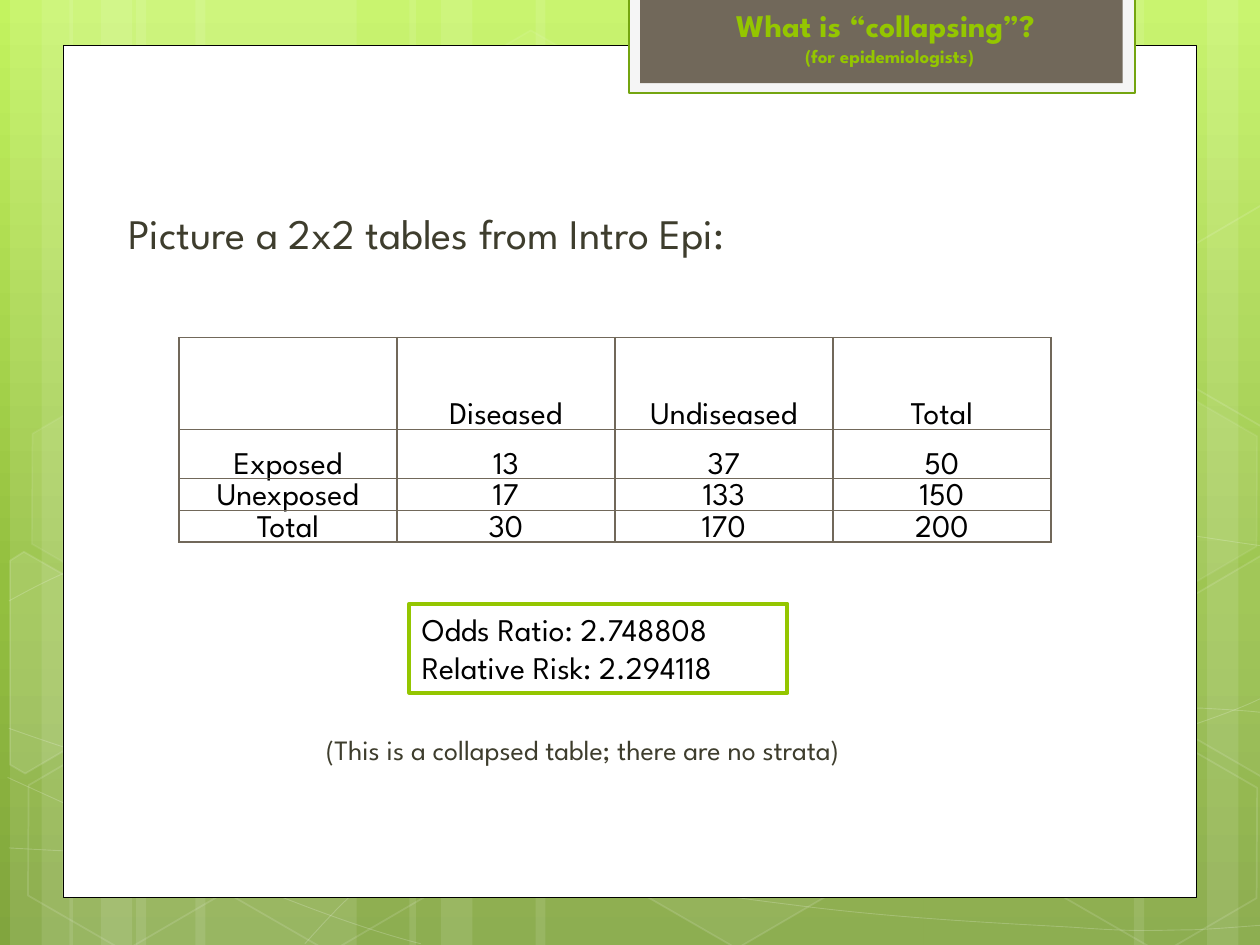
"""Build the slide that explains collapsing with a 2x2 table."""
import copy
import pptx
import pptx.dml.color
import pptx.enum.shapes
import pptx.enum.text
import pptx.oxml
import pptx.oxml.ns
import pptx.util

PX = 9144
THEME = {
    "font": "League Spartan", "white": "FFFFFF", "black": "000000",
    "lime": "94C600", "edge": "74A510", "pale": "F5F5F5", "brown": "71685A",
    "ink": "3E3D2D", "head": 24, "base": 18, "note": 16, "sub": 10.8,
    "sky": [(0, "C3F35F"), (0.62, "93BF3F"), (1, "81A53E")],
}
TITLE = ["What is “collapsing”? ", "(for epidemiologists)"]
LEAD = "Picture a 2x2 tables from Intro Epi:"
NOTE = "(This is a collapsed table; there are no strata)"
STATS = ["Odds Ratio: 2.748808", "Relative Risk: 2.294118"]
GRID = [
    ["", "Diseased", "Undiseased", "Total"],
    ["Exposed", "13", "37", "50"],
    ["Unexposed", "17", "133", "150"],
    ["Total", "30", "170", "200"],
]
ROWS = [73, 39, 24, 24]
COL = 173

BANDS = [(108, 175), (8, 50), (33, 83), (155, 175), (55, 50), (80, 83),
         (733, 175), (958, 50), (900, 83), (425, 308), (325, 50), (350, 83)]
WAVES = [
    [(7, 673), (61, 676), (115, 679), (190, 678), (265, 677), (358, 675),
     (458, 665), (558, 655), (700, 636), (792, 617), (883, 598), (977, 568),
     (1007, 551)],
    [(7, 477), (36, 461), (65, 446), (121, 431), (178, 416), (259, 394),
     (347, 387), (436, 380), (544, 379), (654, 387), (764, 395), (947, 426),
     (1007, 434)],
    [(6, 617), (127, 672), (247, 727), (334, 749)],
    [(7, 578), (38, 589), (70, 600), (128, 616), (186, 631), (273, 656),
     (357, 673), (440, 690), (545, 708), (628, 718), (711, 729), (800, 733),
     (853, 736), (905, 740), (919, 738), (945, 738), (971, 737), (989, 735),
     (1007, 734)],
    [(242, 749), (260, 729), (278, 709), (302, 691), (326, 673), (360, 653),
     (388, 639), (416, 625), (433, 619), (470, 609), (506, 599), (573, 585),
     (608, 578), (644, 571), (649, 571), (680, 569), (711, 566), (760, 563),
     (794, 562), (829, 561), (886, 562), (886, 562), (908, 562), (931, 562),
     (953, 562), (971, 563), (988, 564), (997, 565), (1006, 566), (1003, 565),
     (1006, 566)],
]
HEXES = [(334, 36, 4, 8), (497, 589, 6, 12), (11, 591, 0, 12),
         (14, 312, 7, 8), (174, 592, 0, 12), (753, 453, 10, 12),
         (834, 593, 0, 12), (834, 314, 7, 8)]
SHARDS = [
    ([(8, 445), (19, 438), (96, 482), (95, 570), (20, 614), (8, 607)], 10),
    ([(926, 485), (1001, 441), (1009, 446), (1009, 613), (1002, 617),
      (926, 573)], 4),
    ([(926, 207), (1001, 163), (1010, 168), (1009, 335), (1002, 339),
      (926, 295)], 0),
]
PANELS = [((50, 36, 900, 676), "white", "black", 0.5),
          ((499, -2, 402, 76), "pale", "edge", 1.25),
          ((508, -2, 383, 68), "brown", None, 0)]

RGB = pptx.dml.color.RGBColor.from_string
PT = pptx.util.Pt
QN = pptx.oxml.ns.qn
NS = pptx.oxml.ns.nsdecls("a")
KIND = pptx.enum.shapes.MSO_SHAPE
ALIGN = pptx.enum.text.PP_ALIGN
ANCHOR = pptx.enum.text.MSO_ANCHOR


def haze(fill, name, alpha):
    if not alpha:
        fill.background()
        return
    fill.solid()
    fill.fore_color.rgb = RGB(THEME[name])
    if alpha < 100:
        tone = fill._xPr.find(QN("a:solidFill"))[0]
        tone.append(pptx.oxml.parse_xml(f'<a:alpha {NS} val="{alpha * 1000}"/>'))


def paint(item, fill, alpha, line=None, width=0, glow=100):
    item.shadow.inherit = False
    haze(item.fill, fill, alpha)
    haze(item.line.fill, line, glow if line else 0)
    if line:
        item.line.width = PT(width)
    return item


def place(shapes, kind, box):
    return shapes.add_shape(kind, *(n * PX for n in box))


def trace(shapes, dots, close):
    pen = shapes.build_freeform(*dots[0], scale=float(PX))
    pen.add_line_segments(dots[1:], close=close)
    return pen.convert_to_shape()


def curve(shapes, dots):
    wave = trace(shapes, dots, False)
    legs = list(wave.element.iter(QN("a:lnTo")))
    for i in range(0, len(legs), 3):
        bend = pptx.oxml.parse_xml(f"<a:cubicBezTo {NS}/>")
        legs[i].addprevious(bend)
        for leg in legs[i:i + 3]:
            bend.append(leg[0])
            leg.getparent().remove(leg)
    return wave


def write(frame, lines, size, name, align=ALIGN.LEFT, lead=1.0):
    frame.text = "\n".join(lines)
    for para in frame.paragraphs:
        para.alignment = align
        para.line_spacing = lead
        for font in [para.font] + [run.font for run in para.runs]:
            font.name, font.size = THEME["font"], PT(THEME[size])
            font.color.rgb = RGB(THEME[name])


def label(shapes, box, text, size, name, align, anchor):
    frame = shapes.add_textbox(*(n * PX for n in box)).text_frame
    frame.word_wrap = True
    frame.vertical_anchor = anchor
    write(frame, [text], size, name, align)
    return frame


def sky(slide):
    fill = slide.background.fill
    fill.gradient()
    fill.gradient_angle = 270
    stops = slide.element.find(".//" + QN("a:gsLst"))
    stops.append(copy.deepcopy(stops[0]))
    for stop, (spot, tone) in zip(fill.gradient_stops, THEME["sky"]):
        stop.position, stop.color.rgb = spot, RGB(tone)


def decor(shapes):
    for left, wide in BANDS:
        paint(place(shapes, KIND.RECTANGLE, (left, 0, wide, 750)), "white", 10)
    for dots in WAVES:
        paint(curve(shapes, dots), None, 0, "white", 0.5, 20)
    for left, top, alpha, glow in HEXES:
        cell = place(shapes, KIND.HEXAGON, (left, top, 175, 152))
        cell.adjustments[0] = 0.285
        cell.rotation = 30
        paint(cell, "white", alpha, "white", 1, glow)
    for dots, alpha in SHARDS:
        paint(trace(shapes, dots, True), "white", alpha, "white", 1, 12)
    for box, fill, line, width in PANELS:
        paint(place(shapes, KIND.RECTANGLE, box), fill, 100, line, width)


def border(cell):
    props = cell._tc.get_or_add_tcPr()
    for i, side in enumerate("LRTB"):
        props.insert(i, pptx.oxml.parse_xml(
            f'<a:ln{side} {NS} w="12700"><a:solidFill>'
            f'<a:srgbClr val="{THEME["brown"]}"/></a:solidFill></a:ln{side}>'))


def table(shapes):
    box = (142, 268, COL * len(GRID[0]), sum(ROWS))
    grid = shapes.add_table(len(GRID), len(GRID[0]), *(n * PX for n in box)).table
    grid.first_row = grid.horz_banding = False
    for col in grid.columns:
        col.width = COL * PX
    for r, texts in enumerate(GRID):
        grid.rows[r].height = ROWS[r] * PX
        for c, text in enumerate(texts):
            cell = grid.cell(r, c)
            cell.margin_left = cell.margin_right = cell.margin_top = PX
            cell.margin_bottom = 0
            cell.vertical_anchor = ANCHOR.BOTTOM
            cell.fill.background()
            write(cell.text_frame, [text], "base", "black", ALIGN.CENTER, 0.8)
            border(cell)


def main():
    deck = pptx.Presentation()
    deck.slide_width, deck.slide_height = 1000 * PX, 750 * PX
    slide = deck.slides.add_slide(deck.slide_layouts[6])
    shapes = slide.shapes
    sky(slide)
    decor(shapes)
    head = label(shapes, (467, 8, 478, 50), "\v".join(TITLE), "base", "lime",
                 ALIGN.CENTER, ANCHOR.BOTTOM)
    for run in head.paragraphs[0].runs:
        run.font.bold = True
    run.font.size = PT(THEME["sub"])
    label(shapes, (92, 160, 741, 50), LEAD, "head", "ink", ALIGN.LEFT, ANCHOR.MIDDLE)
    label(shapes, (92, 575, 741, 40), NOTE, "note", "ink", ALIGN.CENTER, ANCHOR.MIDDLE)
    table(shapes)
    stats = paint(place(shapes, KIND.RECTANGLE, (325, 479, 300, 71)),
                  None, 0, "lime", 2.25)
    stats.text_frame.vertical_anchor = ANCHOR.TOP
    write(stats.text_frame, STATS, "base", "black")
    deck.save("out.pptx")


if __name__ == "__main__":
    main()
